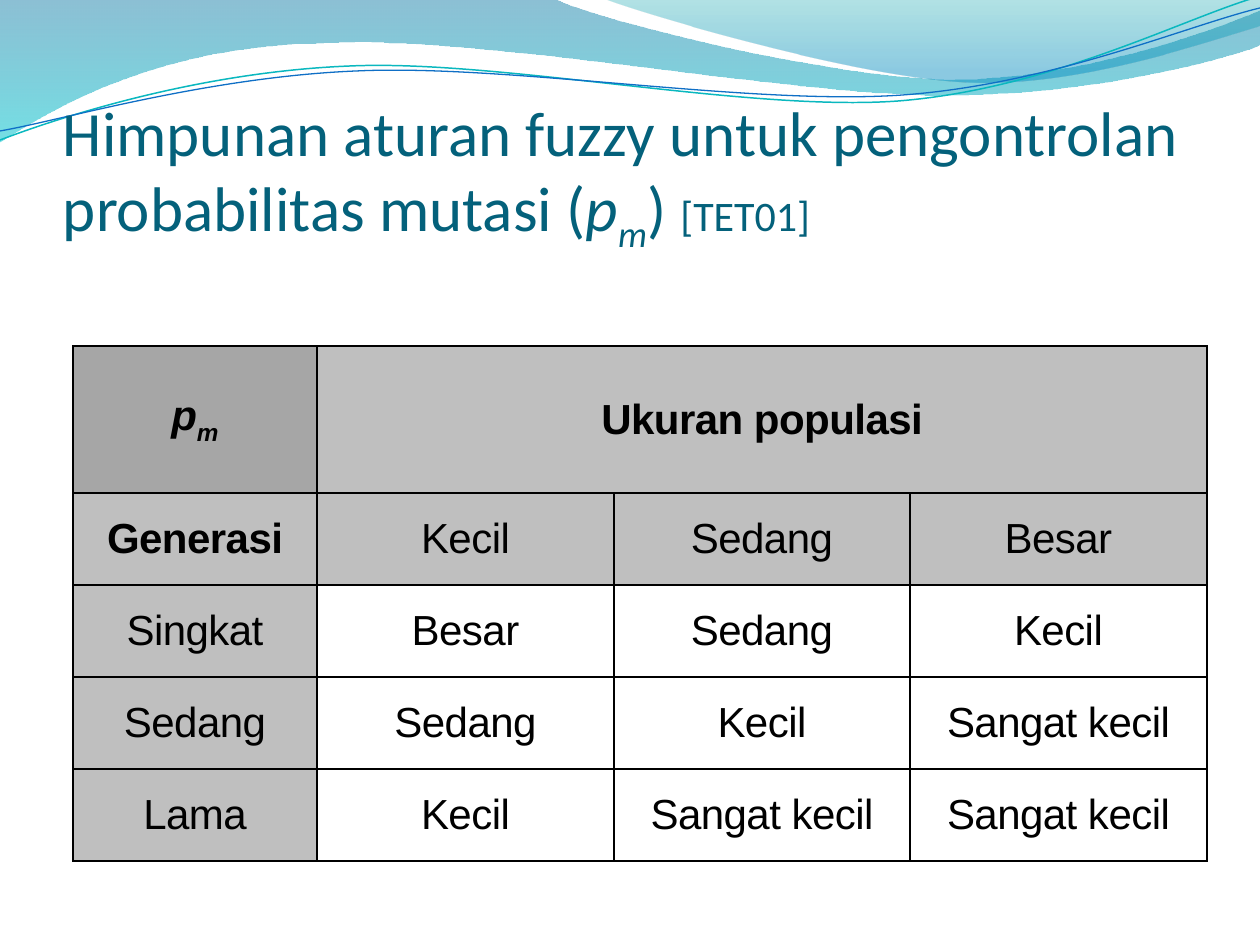
import pptx
import pptx.dml.color
import pptx.enum.text
import pptx.oxml
import pptx.oxml.ns
import pptx.util

RGBColor = pptx.dml.color.RGBColor
Pt = pptx.util.Pt
MSO_ANCHOR = pptx.enum.text.MSO_ANCHOR
qn = pptx.oxml.ns.qn
A_NAMESPACE = pptx.oxml.ns.nsdecls("a")

EMU_PER_PX = 914400 / 126

BLACK = RGBColor(0x00, 0x00, 0x00)
TITLE_BLUE = RGBColor(0x04, 0x61, 0x7B)
CORNER_GRAY = RGBColor(0xA6, 0xA6, 0xA6)
HEADER_GRAY = RGBColor(0xBF, 0xBF, 0xBF)
DEEP_BLUE = RGBColor(0x00, 0x74, 0xA1)
CYAN = RGBColor(0x00, 0xC6, 0xCF)
TEAL = RGBColor(0x00, 0xA1, 0xA9)
SKY_BLUE = RGBColor(0x00, 0x8B, 0xBF)
LINE_TEAL = RGBColor(0x0A, 0xB8, 0xBF)
LINE_BLUE = RGBColor(0x0F, 0x6F, 0xC6)

# Each segment is one point (straight) or three points (Bezier curve).
LEFT_WAVE = [[(0, 0)], [(554, -1)],
             [(600, 21), (837, 79), (955, 79)],
             [(1075, 79), (1207, 33), (1260, 11)],
             [(1261, 45)],
             [(1239, 55), (1096, 96), (940, 95)],
             [(784, 95), (481, 35), (324, 43)],
             [(163, 45), (58, 105), (-1, 142)],
             [(0, 0)]]
RIGHT_WAVE = [[(604, -1)],
              [(641, 14), (859, 78), (969, 82)],
              [(1079, 87), (1211, 40), (1260, 26)],
              [(1260, 0)], [(604, -1)]]
TEAL_CURVE = [[(0, 140)],
              [(60, 117), (199, 72), (349, 66)],
              [(498, 59), (747, 112), (898, 101)],
              [(1050, 89), (1182, 19), (1257, -3)]]
BLUE_CURVE = [[(0, 131)],
              [(59, 121), (207, 77), (357, 71)],
              [(508, 64), (752, 106), (903, 95)],
              [(1053, 84), (1186, 26), (1260, 8)]]

COLUMN_WIDTHS = [244, 297, 296, 297]
ROW_HEIGHTS = [147, 92, 92, 92, 92]
RULES = [
    ["pm", "Ukuran populasi", "", ""],
    ["Generasi", "Kecil", "Sedang", "Besar"],
    ["Singkat", "Besar", "Sedang", "Kecil"],
    ["Sedang", "Sedang", "Kecil", "Sangat kecil"],
    ["Lama", "Kecil", "Sangat kecil", "Sangat kecil"],
]


def px(length):
    return pptx.util.Emu(round(length * EMU_PER_PX))


def add_outline(slide, segments, close):
    """Build a freeform, then join the points of each curve into one Bezier."""
    points = [point for segment in segments for point in segment]
    builder = slide.shapes.build_freeform(*points[0], scale=EMU_PER_PX)
    builder.add_line_segments(points[1:], close=close)
    outline = builder.convert_to_shape()
    outline.shadow.inherit = False
    steps = iter(outline._element.findall(".//" + qn("a:lnTo")))
    for segment in segments[1:]:
        segment_steps = [next(steps) for _ in segment]
        if len(segment) == 3:
            bezier = pptx.oxml.parse_xml(f"<a:cubicBezTo {A_NAMESPACE}/>")
            segment_steps[0].addprevious(bezier)
            for step in segment_steps:
                bezier.append(step[0])
                step.getparent().remove(step)
    return outline


def add_wave(slide, segments, stops):
    """Add a filled wave; each stop is position, colour, opacity in percent."""
    wave = add_outline(slide, segments, True)
    wave.line.fill.background()
    wave.fill.gradient()
    wave.fill.gradient_angle = 270
    for stop, (position, color, _) in zip(wave.fill.gradient_stops, stops):
        stop.position = position
        stop.color.rgb = color
    colors = wave._element.spPr.findall(".//" + qn("a:srgbClr"))
    for color_element, (_, _, opacity) in zip(colors, stops):
        color_element.append(pptx.oxml.parse_xml(
            f'<a:alpha {A_NAMESPACE} val="{opacity * 1000}"/>'))


def add_curve(slide, segments, color, width):
    curve = add_outline(slide, segments, False)
    curve.fill.background()
    curve.line.color.rgb = color
    curve.line.width = Pt(width)


def add_run(paragraph, text, font_name, size, color, italic=False, subscript=False):
    run = paragraph.add_run()
    run.text = text
    run.font.name = font_name
    run.font.size = Pt(size)
    run.font.color.rgb = color
    run.font.italic = italic
    if subscript:
        run.font._element.set("baseline", "-25000")
    return run


def add_title(slide):
    title = slide.shapes.add_textbox(px(63), px(97), px(1144), px(158))
    frame = title.text_frame
    frame.word_wrap = True
    frame.vertical_anchor = MSO_ANCHOR.BOTTOM
    frame.margin_left = frame.margin_right = frame.margin_bottom = 0
    frame.margin_top = px(6)
    for text, size, italic, subscript in [
        ("Himpunan aturan fuzzy untuk pengontrolan probabilitas mutasi (", 36, False, False),
        ("p", 36, True, False),
        ("m", 36, True, True),
        (") ", 36, False, False),
        ("[TET01]", 24, False, False),
    ]:
        add_run(frame.paragraphs[0], text, "Calibri", size, TITLE_BLUE, italic, subscript)


def add_borders(cell):
    properties = cell._tc.get_or_add_tcPr()
    for index, side in enumerate(("lnL", "lnR", "lnT", "lnB")):
        properties.insert(index, pptx.oxml.parse_xml(
            f'<a:{side} {A_NAMESPACE} w="12700"><a:solidFill>'
            f'<a:srgbClr val="{BLACK}"/></a:solidFill></a:{side}>'))


def fill_cell(cell, text, row, column):
    if row < 2 or column == 0:
        cell.fill.solid()
        cell.fill.fore_color.rgb = CORNER_GRAY if row == column == 0 else HEADER_GRAY
    else:
        cell.fill.background()
    add_borders(cell)
    cell.vertical_anchor = MSO_ANCHOR.MIDDLE
    cell.margin_left = cell.margin_right = px(9)
    cell.margin_top = cell.margin_bottom = 0
    if not text:
        return
    paragraph = cell.text_frame.paragraphs[0]
    paragraph.alignment = pptx.enum.text.PP_ALIGN.CENTER
    paragraph.space_before = Pt(3)
    paragraph.space_after = Pt(6)
    is_symbol = text == "pm"
    for part in text if is_symbol else [text]:
        run = add_run(paragraph, part, "Arial", 24, BLACK, is_symbol, part == "m")
        run.font.bold = row == 0 or text == "Generasi"
        run.font._element.set("spc", "-30")


def add_rule_table(slide):
    frame = slide.shapes.add_table(len(ROW_HEIGHTS), len(COLUMN_WIDTHS), px(73), px(346),
                                   px(sum(COLUMN_WIDTHS)), px(sum(ROW_HEIGHTS)))
    table = frame.table
    table.first_row = table.horz_banding = False
    for column, width in zip(table.columns, COLUMN_WIDTHS):
        column.width = px(width)
    for row, height in zip(table.rows, ROW_HEIGHTS):
        row.height = px(height)
    table.cell(0, 1).merge(table.cell(0, 3))
    for row, texts in enumerate(RULES):
        for column, text in enumerate(texts):
            fill_cell(table.cell(row, column), text, row, column)


def main():
    deck = pptx.Presentation()
    deck.slide_width, deck.slide_height = px(1260), px(945)
    slide = deck.slides.add_slide(deck.slide_layouts[6])
    add_wave(slide, LEFT_WAVE, [(0, DEEP_BLUE, 45), (1, CYAN, 55)])
    add_wave(slide, RIGHT_WAVE, [(0, TEAL, 30), (0.8, SKY_BLUE, 45)])
    add_curve(slide, TEAL_CURVE, LINE_TEAL, 0.85)
    add_curve(slide, BLUE_CURVE, LINE_BLUE, 0.75)
    add_title(slide)
    add_rule_table(slide)
    deck.save("out.pptx")


if __name__ == "__main__":
    main()
